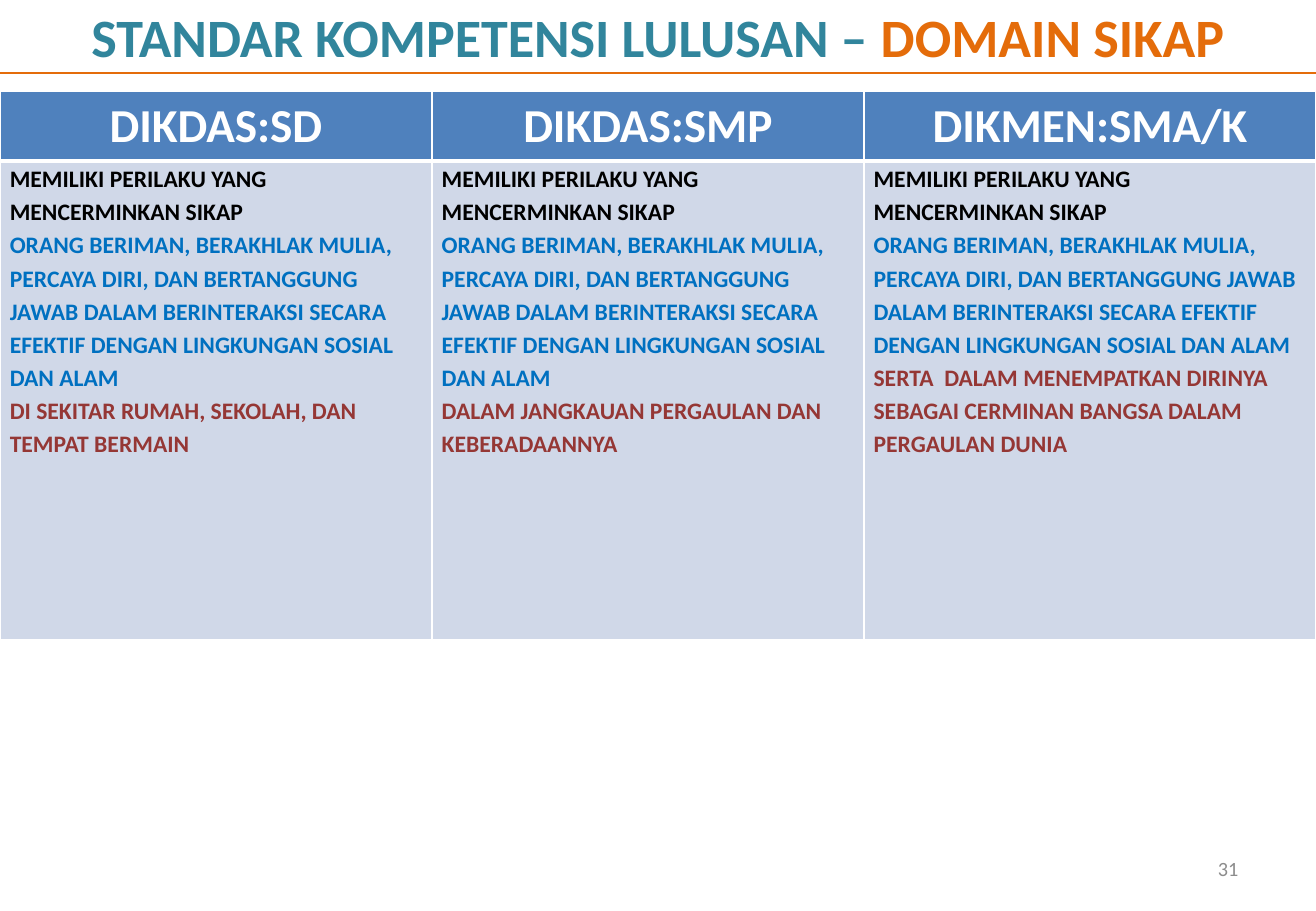
import pptx
import pptx.util
import pptx.dml.color
import pptx.enum.shapes
import pptx.enum.text
import pptx.oxml
import pptx.oxml.ns

Pt = pptx.util.Pt
ALIGN = pptx.enum.text.PP_ALIGN

COLORS = {
    "teal": "31859C",
    "orange": "E46C0A",
    "white": "FFFFFF",
    "header": "4F81BD",
    "body": "D0D8E8",
    "black": "000000",
    "blue": "0070C0",
    "red": "953735",
    "gray": "8C8C8C",
}
FONT = "Calibri"
TITLE = [("STANDAR KOMPETENSI LULUSAN – ", "teal"), ("DOMAIN SIKAP", "orange")]
OPENING = "MEMILIKI PERILAKU YANG MENCERMINKAN SIKAP"
ATTITUDE = (
    "ORANG BERIMAN, BERAKHLAK MULIA, PERCAYA DIRI, DAN BERTANGGUNG JAWAB "
    "DALAM BERINTERAKSI SECARA EFEKTIF DENGAN LINGKUNGAN SOSIAL DAN ALAM"
)
LEVELS = [
    ("DIKDAS:SD", "DI SEKITAR RUMAH, SEKOLAH, DAN TEMPAT BERMAIN"),
    ("DIKDAS:SMP", "DALAM JANGKAUAN PERGAULAN DAN KEBERADAANNYA"),
    ("DIKMEN:SMA/K",
     "SERTA  DALAM MENEMPATKAN DIRINYA SEBAGAI CERMINAN BANGSA DALAM PERGAULAN DUNIA"),
]
PAGE_NUMBER = "31"

WIDTH, HEIGHT = 780, 540
COLUMN_WIDTHS = [256, 256, 268]
ROW_HEIGHTS = [41.5, 283.5]
TABLE_TOP = 54
RULE_TOP = 43.2


def color(name):
    return pptx.dml.color.RGBColor.from_string(COLORS[name])


def format_paragraph(para, size, name, align, bold=True):
    para.alignment = align
    para.font.name = FONT
    para.font.size = Pt(size)
    para.font.bold = bold
    para.font.color.rgb = color(name)


def style_cell(cell, fill, side_margin, end_margin, top_line, bottom_line):
    cell.fill.solid()
    cell.fill.fore_color.rgb = color(fill)
    cell.margin_left = cell.margin_right = Pt(side_margin)
    cell.margin_top = cell.margin_bottom = Pt(end_margin)
    properties = cell._tc.get_or_add_tcPr()
    borders = [("lnL", 1), ("lnR", 1), ("lnT", top_line), ("lnB", bottom_line)]
    for index, (tag, width) in enumerate(borders):
        properties.insert(index, pptx.oxml.parse_xml(
            f'<a:{tag} {pptx.oxml.ns.nsdecls("a")} w="{Pt(width)}"><a:solidFill>'
            f'<a:srgbClr val="{COLORS["white"]}"/></a:solidFill></a:{tag}>'))


def add_title(page):
    title = page.shapes.title
    title.left, title.top, title.width, title.height = Pt(0), Pt(-2), Pt(WIDTH), Pt(46)
    frame = title.text_frame
    frame.auto_size = pptx.enum.text.MSO_AUTO_SIZE.NONE
    frame.vertical_anchor = pptx.enum.text.MSO_ANCHOR.MIDDLE
    para = frame.paragraphs[0]
    format_paragraph(para, 32, "teal", ALIGN.CENTER)
    for text, name in TITLE:
        span = para.add_run()
        span.text = text
        span.font.color.rgb = color(name)


def add_levels(page):
    table = page.shapes.add_table(
        len(ROW_HEIGHTS), len(LEVELS), Pt(0), Pt(TABLE_TOP),
        Pt(WIDTH), Pt(sum(ROW_HEIGHTS))).table
    for row, height in zip(table.rows, ROW_HEIGHTS):
        row.height = Pt(height)
    for index, (heading, scope) in enumerate(LEVELS):
        table.columns[index].width = Pt(COLUMN_WIDTHS[index])
        header = table.cell(0, index)
        header.text = heading
        format_paragraph(header.text_frame.paragraphs[0], 28, "white", ALIGN.CENTER)
        style_cell(header, "header", 7.8, 3.6, 1, 3)

        body = table.cell(1, index)
        body.text = "\n".join([OPENING, ATTITUDE, scope])
        for para, name in zip(body.text_frame.paragraphs, ["black", "blue", "red"]):
            format_paragraph(para, 14, name, ALIGN.LEFT)
            para.line_spacing = 1.15
        style_cell(body, "body", 5.8, 0, 3, 1)


def add_rule(page):
    rule = page.shapes.add_connector(
        pptx.enum.shapes.MSO_CONNECTOR.STRAIGHT,
        Pt(0), Pt(RULE_TOP), Pt(WIDTH), Pt(RULE_TOP))
    rule.line.color.rgb = color("orange")
    rule.line.width = Pt(0.75)
    rule._element.spPr.append(
        pptx.oxml.parse_xml(f'<a:effectLst {pptx.oxml.ns.nsdecls("a")}/>'))


def add_page_number(page):
    box = page.shapes.add_textbox(Pt(559), Pt(500.5), Pt(182), Pt(28.8))
    frame = box.text_frame
    frame.word_wrap = True
    frame.vertical_anchor = pptx.enum.text.MSO_ANCHOR.MIDDLE
    frame.text = PAGE_NUMBER
    format_paragraph(frame.paragraphs[0], 12, "gray", ALIGN.RIGHT, bold=False)


def main():
    deck = pptx.Presentation()
    deck.slide_width, deck.slide_height = Pt(WIDTH), Pt(HEIGHT)
    page = deck.slides.add_slide(deck.slide_layouts.get_by_name("Title Only"))
    add_title(page)
    add_levels(page)
    add_rule(page)
    add_page_number(page)
    deck.save("out.pptx")


if __name__ == "__main__":
    main()
